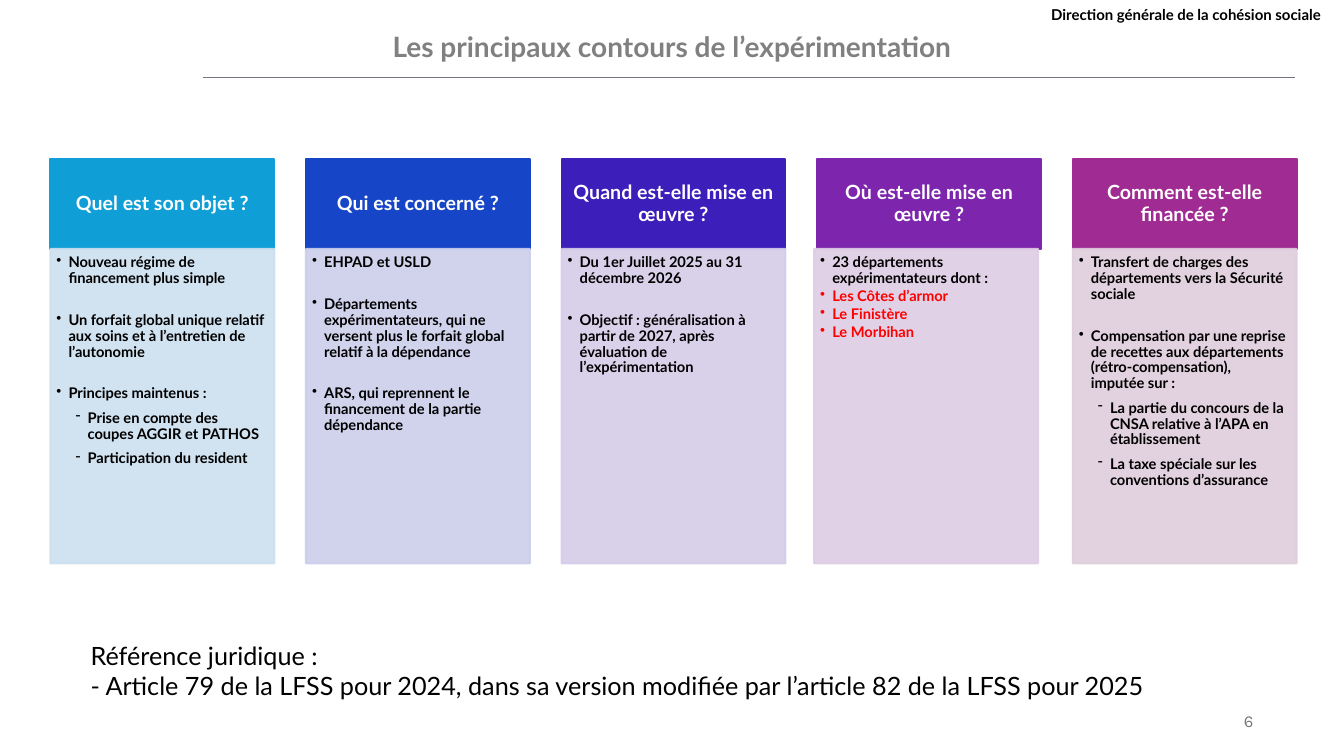
from dataclasses import dataclass

from lxml import etree
from pptx import Presentation
from pptx.dml.color import RGBColor
from pptx.enum.shapes import MSO_CONNECTOR as Connector, MSO_SHAPE as Shape
from pptx.enum.text import MSO_ANCHOR as Anchor, PP_ALIGN as Align
from pptx.oxml.ns import qn
from pptx.util import Inches, Pt


@dataclass(frozen=True)
class Theme:
    """Colours, fonts and type sizes of the slide."""
    font: str = "Lato"
    number_font: str = "Karla"
    ink: str = "000000"
    white: str = "FFFFFF"
    title: str = "808080"
    rule: str = "747480"
    number: str = "797979"
    accent: str = "FF0000"
    title_size: float = 20
    reference_size: float = 18
    heading_size: float = 14
    number_size: float = 12
    department_size: float = 10.7
    item_size: float = 10.5


@dataclass(frozen=True)
class Level:
    """Bullet, indent and colour of one kind of item."""
    bullet: str = "•"
    margin: float = 0.12
    color: str = Theme.ink


THEME = Theme()
POINT = Level()
DETAIL = Level(bullet="-", margin=0.31)
PLACE = Level(color=THEME.accent)

HANGING = 0.12
TIGHT, NEAR, WIDE = 1.5, 6, 18.5
HEADING_HEIGHT = 0.89
OPACITY = 90

COLUMNS = [
    ("Quel est son objet ?", "0F9ED5", "CCDFEF", 0, [
        ("Nouveau régime de financement plus simple", POINT, WIDE),
        ("Un forfait global unique relatif aux soins et à l’entretien de l’autonomie", POINT, WIDE),
        ("Principes maintenus :", POINT, NEAR),
        ("Prise en compte des coupes AGGIR et PATHOS", DETAIL, NEAR),
        ("Participation du resident", DETAIL, NEAR),
    ]),
    ("Qui est concerné ?", "1745C7", "CCCFEC", 0, [
        ("EHPAD et USLD", POINT, WIDE),
        ("Départements expérimentateurs, qui ne versent plus le forfait global "
         "relatif à la dépendance", POINT, WIDE),
        ("ARS, qui reprennent le financement de la partie dépendance", POINT, TIGHT),
    ]),
    ("Quand est-elle mise en œuvre ?", "3C1EBA", "D5CCE8", 0, [
        ("Du 1er Juillet 2025 au 31 décembre 2026", POINT, WIDE),
        ("Objectif : généralisation à partir de 2027, après évaluation de "
         "l’expérimentation", POINT, TIGHT),
    ]),
    ("Où est-elle mise en œuvre ?", "7D25AD", "DECDE4", -0.03, [
        ("23 départements expérimentateurs dont :", POINT, TIGHT),
        ("Les Côtes d’armor", PLACE, TIGHT),
        ("Le Finistère", PLACE, TIGHT),
        ("Le Morbihan", PLACE, TIGHT),
    ]),
    ("Comment est-elle financée ?", "A02B93", "DFCDDC", 0, [
        ("Transfert de charges des départements vers la Sécurité sociale", POINT, WIDE),
        ("Compensation par une reprise de recettes aux départements "
         "(rétro-compensation), imputée sur :", POINT, NEAR),
        ("La partie du concours de la CNSA relative à l’APA en établissement", DETAIL, NEAR),
        ("La taxe spéciale sur les conventions d’assurance", DETAIL, NEAR),
    ]),
]

REFERENCE = [
    "Référence juridique :",
    "- Article 79 de la LFSS pour 2024, dans sa version modifiée par l’article 82 de la LFSS pour 2025",
]


def add_text(frame, text, *, size, color=THEME.ink, font=THEME.font, bold=False,
             align=Align.LEFT, before=0, after=0, spacing=1.0, level=None):
    """Write one formatted paragraph into a text frame."""
    first = frame.paragraphs[0]
    paragraph = frame.add_paragraph() if first.runs else first
    paragraph.alignment = align
    paragraph.space_before, paragraph.space_after = Pt(before), Pt(after)
    paragraph.line_spacing = spacing
    if level:
        properties = paragraph._p.get_or_add_pPr()
        properties.set("marL", str(Inches(level.margin)))
        properties.set("indent", str(-Inches(HANGING)))
        etree.SubElement(properties, qn("a:buChar"), char=level.bullet)
    run = paragraph.add_run()
    run.text = text
    run.font.name, run.font.size, run.font.bold = font, Pt(size), bold
    run.font.color.rgb = RGBColor.from_string(color)


def set_frame(frame, anchor, insets=(0.1, 0.05, 0.1, 0.05)):
    """Wrap a text frame and set its anchor and insets."""
    frame.word_wrap = True
    frame.vertical_anchor = anchor
    (frame.margin_left, frame.margin_top,
     frame.margin_right, frame.margin_bottom) = map(Inches, insets)
    return frame


def add_frame(slide, box, anchor=Anchor.TOP):
    """Add a text box and return its frame."""
    return set_frame(slide.shapes.add_textbox(*map(Inches, box)).text_frame, anchor)


def add_panel(slide, box, color, anchor, insets, opacity=100):
    """Add a coloured rectangle and return its text frame."""
    panel = slide.shapes.add_shape(Shape.RECTANGLE, *map(Inches, box))
    panel.shadow.inherit = False
    panel.line.width = Pt(1.5)
    for fill in (panel.fill, panel.line.fill):
        fill.solid()
        fill.fore_color.rgb = RGBColor.from_string(color)
    if opacity < 100:
        for tint in panel._element.spPr.iter(qn("a:srgbClr")):
            etree.SubElement(tint, qn("a:alpha"), val=str(opacity * 1000))
    return set_frame(panel.text_frame, anchor, insets)


def add_header(slide, box):
    """Place the title, its rule and the department name."""
    left, top, width, height = box
    title = add_frame(slide, box, Anchor.MIDDLE)
    add_text(title, "Les principaux contours de l’expérimentation", size=THEME.title_size,
             color=THEME.title, bold=True, align=Align.CENTER, before=10)
    rule_y = Inches(top + 0.75)
    rule = slide.shapes.add_connector(Connector.STRAIGHT, Inches(left + 1.35), rule_y,
                                      Inches(left + width + 0.17), rule_y)
    rule.line.width = Pt(0.75)
    rule.line.color.rgb = RGBColor.from_string(THEME.rule)
    etree.SubElement(rule._element.spPr, qn("a:effectLst"))
    department = add_frame(slide, (left + 9.25, top - 0.01, 3.71, 0.28))
    add_text(department, "Direction générale de la cohésion sociale",
             size=THEME.department_size, bold=True, align=Align.CENTER)


def add_column(slide, box, heading, strong, pale, shift, items):
    """Place one question with its answers below."""
    left, top, width, height = box
    question = add_panel(slide, (left, top, width, HEADING_HEIGHT), strong,
                         Anchor.MIDDLE, (0.11, 0.06, 0.11, 0.06))
    add_text(question, heading, size=THEME.heading_size, color=THEME.white, bold=True,
             align=Align.CENTER, spacing=0.9)
    answers = add_panel(
        slide, (left + shift, top + HEADING_HEIGHT, width, height - HEADING_HEIGHT),
        pale, Anchor.TOP, (0.06, 0.06, 0.09, 0.1), OPACITY)
    for text, level, after in items:
        add_text(answers, text, size=THEME.item_size, color=level.color, bold=True,
                 after=after, spacing=0.9, level=level)


def add_columns(slide, box, column_width):
    """Spread the questions evenly across the box."""
    left, top, width, height = box
    pitch = (width - column_width) / (len(COLUMNS) - 1)
    for index, column in enumerate(COLUMNS):
        add_column(slide, (left + index * pitch, top, column_width, height), *column)


def add_footer(slide, box):
    """Place the legal reference and the page number."""
    left, top, width, height = box
    reference = add_frame(slide, box)
    for line in REFERENCE:
        add_text(reference, line, size=THEME.reference_size)
    number = add_frame(slide, (left + 11.11, top + 0.65, 0.62, 0.4), Anchor.MIDDLE)
    add_text(number, "6", size=THEME.number_size, color=THEME.number,
             font=THEME.number_font, align=Align.RIGHT)


def main():
    """Build the slide and save it."""
    deck = Presentation()
    deck.slide_width, deck.slide_height = Inches(13.33), Inches(7.5)
    slide = deck.slides.add_slide(deck.slide_layouts[6])
    add_header(slide, (0.66, 0.02, 12.01, 0.87))
    add_columns(slide, (0.5, 1.58, 12.36, 4.01), column_width=2.22)
    add_footer(slide, (0.8, 6.3, 12.19, 0.71))
    deck.save("out.pptx")


if __name__ == "__main__":
    main()
